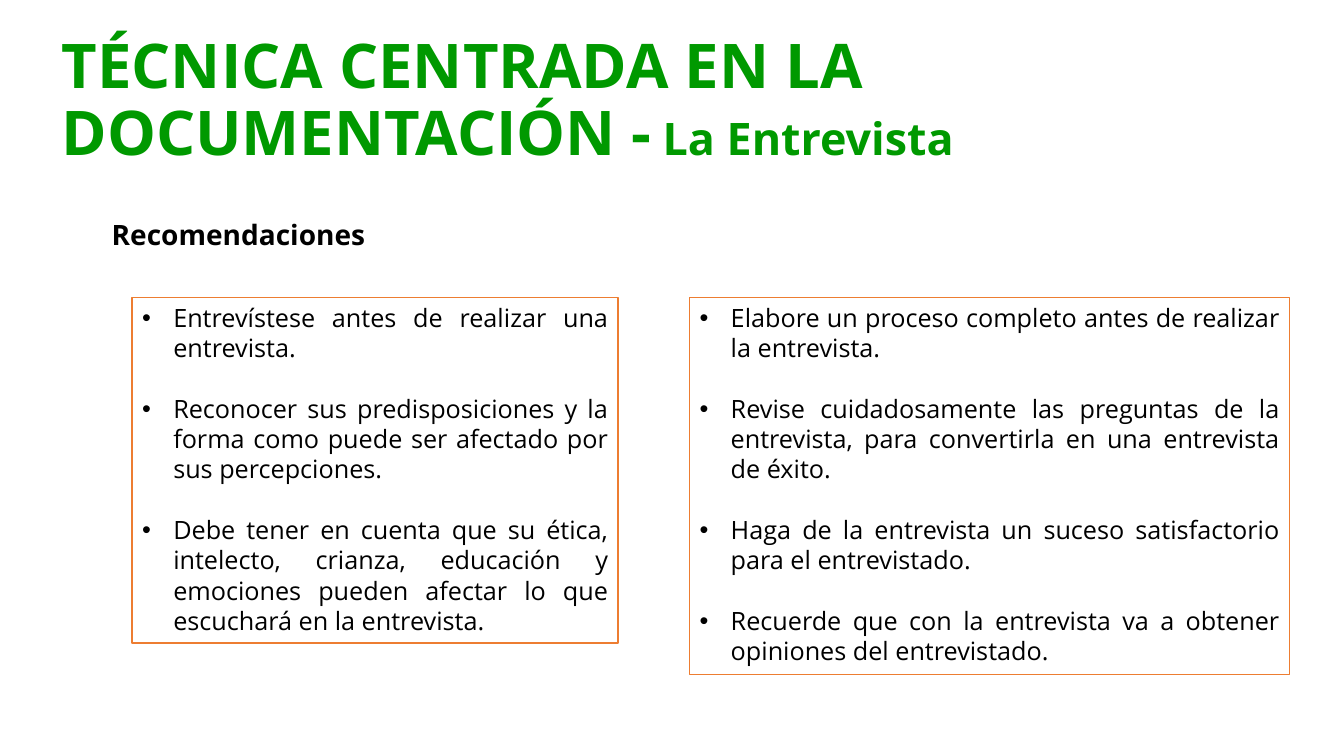
from lxml.etree import SubElement
from pptx import Presentation
from pptx.dml.color import RGBColor
from pptx.enum.shapes import MSO_SHAPE
from pptx.enum.text import MSO_ANCHOR, MSO_AUTO_SIZE, PP_ALIGN
from pptx.oxml.ns import qn
from pptx.util import Inches, Pt

WIDTH, HEIGHT = 13.33, 7.5
GREEN, BLACK, WHITE, ORANGE = "009900", "000000", "FFFFFF", "ED7D31"

LEFT_ADVICE = [
    "Entrevístese antes de realizar una entrevista.",
    "Reconocer sus predisposiciones y la forma como puede ser afectado por sus percepciones.",
    "Debe tener en cuenta que su ética, intelecto, crianza, educación y emociones pueden "
    "afectar lo que escuchará en la entrevista.",
]
RIGHT_ADVICE = [
    "Elabore un proceso completo antes de realizar la entrevista.",
    "Revise cuidadosamente las preguntas de la entrevista, para convertirla en una "
    "entrevista de éxito.",
    "Haga de la entrevista un suceso satisfactorio para el entrevistado.",
    "Recuerde que con la entrevista va a obtener opiniones del entrevistado.",
]


def color(value):
    return RGBColor.from_string(value)


def apply(target, values):
    for name, value in values.items():
        setattr(target, name, value)


class SlideBuilder:
    font_name = "Open Sans"
    columns, rows = 100, 100

    def __init__(self, presentation):
        self.slide = presentation.slides.add_slide(presentation.slide_layouts[5])

    def place(self, left, top, width, height):
        column, row = WIDTH / self.columns, HEIGHT / self.rows
        return [Inches(left * column), Inches(top * row),
                Inches(width * column), Inches(height * row)]

    def add_text(self, paragraph, text, size, text_color, bold=False):
        run = paragraph.add_run()
        run.text = text
        apply(run.font, {"name": self.font_name, "size": Pt(size), "bold": bold})
        run.font.color.rgb = color(text_color)

    def title(self, area, parts):
        shape = self.slide.shapes.title
        apply(shape, dict(zip(("left", "top", "width", "height"), self.place(*area))))
        apply(shape.text_frame, {"word_wrap": True, "auto_size": MSO_AUTO_SIZE.NONE,
                                 "vertical_anchor": MSO_ANCHOR.MIDDLE})
        paragraph = shape.text_frame.paragraphs[0]
        apply(paragraph, {"alignment": PP_ALIGN.LEFT, "line_spacing": 0.9})
        for text, size in parts:
            self.add_text(paragraph, text, size, GREEN, True)

    def heading(self, area, text):
        shape = self.slide.shapes.add_textbox(*self.place(*area))
        shape.text_frame.word_wrap = True
        self.add_text(shape.text_frame.paragraphs[0], text, 20, BLACK, True)

    def bullet(self, paragraph):
        properties = paragraph._p.get_or_add_pPr()
        properties.set("marL", str(Inches(0.31)))
        properties.set("indent", str(Inches(-0.31)))
        SubElement(properties, qn("a:buFont"), typeface="Arial")
        SubElement(properties, qn("a:buChar"), char="•")

    def advice_box(self, area, advice):
        shape = self.slide.shapes.add_shape(MSO_SHAPE.RECTANGLE, *self.place(*area))
        shape.shadow.inherit = False
        shape.fill.solid()
        shape.fill.fore_color.rgb = color(WHITE)
        shape.line.color.rgb = color(ORANGE)
        shape.line.width = Pt(1)
        frame = shape.text_frame
        apply(frame, {"word_wrap": True, "vertical_anchor": MSO_ANCHOR.TOP})
        for index, text in enumerate(advice):
            paragraph = frame.add_paragraph() if index else frame.paragraphs[0]
            self.bullet(paragraph)
            paragraph.alignment = PP_ALIGN.JUSTIFY
            if index:
                paragraph.space_before = Pt(21.8)
            self.add_text(paragraph, text, 18, BLACK)


def main():
    presentation = Presentation()
    apply(presentation, {"slide_width": Inches(WIDTH), "slide_height": Inches(HEIGHT)})
    builder = SlideBuilder(presentation)
    builder.title((3.83, 4.27, 86.27, 18.4),
                  [("TÉCNICA CENTRADA EN LA DOCUMENTACIÓN -", 44), (" ", 28), ("La Entrevista", 32)])
    builder.heading((7.58, 28.13, 26.71, 5.87), "Recomendaciones")
    builder.advice_box((9.83, 39.33, 36.16, 45.73), LEFT_ADVICE)
    builder.advice_box((51.31, 39.33, 44.64, 49.87), RIGHT_ADVICE)
    presentation.save("out.pptx")


if __name__ == "__main__":
    main()
